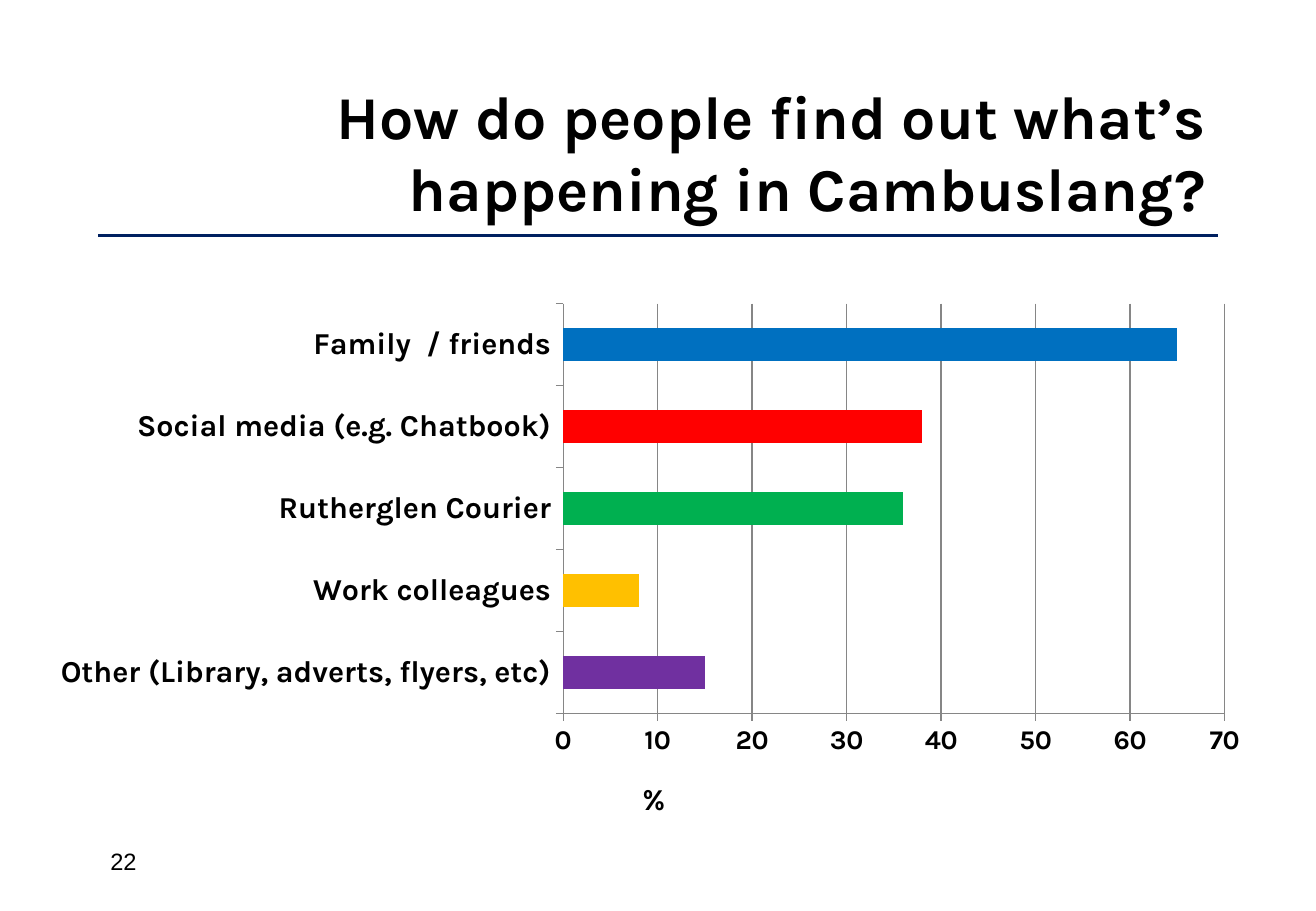
"""Builds a slide with a bar chart of how residents hear local news."""
from dataclasses import dataclass

from lxml.etree import SubElement
from pptx import Presentation
from pptx.chart.axis import ValueAxis
from pptx.chart.chart import Chart
from pptx.chart.data import CategoryChartData
from pptx.dml.color import RGBColor
from pptx.enum.chart import XL_CHART_TYPE, XL_TICK_MARK
from pptx.enum.shapes import MSO_CONNECTOR
from pptx.enum.text import MSO_ANCHOR, PP_ALIGN
from pptx.oxml.ns import qn
from pptx.slide import Slide
from pptx.text.text import Font
from pptx.util import Inches, Pt


@dataclass(frozen=True)
class Theme:
    """Colours, fonts and type sizes of the slide."""
    ink: str = "000000"
    rule: str = "002060"
    grid: str = "868686"
    heading_font: str = "Karla"
    number_font: str = "Arial"
    title_size: int = 36
    label_size: int = 18
    scale_size: int = 16
    number_size: int = 14


@dataclass(frozen=True)
class Source:
    """One way of hearing news, its share in percent and its bar colour."""
    label: str
    share: int
    color: str


@dataclass(frozen=True)
class Caption:
    """A text box with its place in inches and its style."""
    text: str
    left: float
    top: float
    width: float
    height: float
    font: str
    size: int
    bold: bool
    align: PP_ALIGN
    anchor: MSO_ANCHOR


THEME = Theme()
MARGIN, RULE_WIDTH, RULE_TOP = 0.81, 9.21, 1.94

SOURCES = [
    Source("Other (Library, adverts, flyers, etc)", 15, "7030A0"),
    Source("Work colleagues", 8, "FFC000"),
    Source("Rutherglen Courier", 36, "00B050"),
    Source("Social media (e.g. Chatbook)", 38, "FF0000"),
    Source("Family  / friends", 65, "0070C0"),
]

CAPTIONS = [
    Caption("How do people find out what’s happening in Cambuslang?",
            MARGIN, 0.58, RULE_WIDTH, 1.33, THEME.heading_font,
            THEME.title_size, True, PP_ALIGN.RIGHT, MSO_ANCHOR.MIDDLE),
    Caption("22", MARGIN, 6.92, 0.9, 0.33, THEME.number_font,
            THEME.number_size, False, PP_ALIGN.LEFT, MSO_ANCHOR.TOP),
]


def style_font(font: Font, name: str, size: int, bold: bool) -> None:
    """Apply a typeface, size and weight in the ink colour."""
    font.name = name
    font.size = Pt(size)
    font.bold = bold
    font.color.rgb = RGBColor.from_string(THEME.ink)


def add_caption(slide: Slide, caption: Caption) -> None:
    """Add one caption to the slide."""
    box = slide.shapes.add_textbox(
        Inches(caption.left), Inches(caption.top),
        Inches(caption.width), Inches(caption.height))
    frame = box.text_frame
    frame.word_wrap = True
    frame.vertical_anchor = caption.anchor
    frame.text = caption.text
    paragraph = frame.paragraphs[0]
    paragraph.alignment = caption.align
    style_font(paragraph.runs[0].font, caption.font, caption.size, caption.bold)


def add_title_rule(slide: Slide) -> None:
    """Draw the rule under the title."""
    rule = slide.shapes.add_connector(
        MSO_CONNECTOR.STRAIGHT, Inches(MARGIN), Inches(RULE_TOP),
        Inches(MARGIN + RULE_WIDTH), Inches(RULE_TOP))
    rule.line.color.rgb = RGBColor.from_string(THEME.rule)
    rule.line.width = Pt(2)
    SubElement(rule.element.spPr, qn("a:effectLst"))


def set_layout(parent, position: int, settings: dict[str, str | float]) -> None:
    """Give a chart part a manual layout in fractions of the chart."""
    for previous in parent.findall(qn("c:layout")):
        parent.remove(previous)
    layout = SubElement(parent, qn("c:layout"))
    manual = SubElement(layout, qn("c:manualLayout"))
    for name, value in settings.items():
        SubElement(manual, qn(f"c:{name}")).set("val", str(value))
    parent.insert(position, layout)


def style_share_axis(axis: ValueAxis) -> None:
    """Set the percent scale, its gridlines and its title."""
    axis.minimum_scale, axis.maximum_scale, axis.major_unit = 0, 70, 10
    axis.has_major_gridlines = True
    axis.major_gridlines.format.line.color.rgb = RGBColor.from_string(THEME.grid)
    axis.tick_labels.number_format = "0"
    axis.tick_labels.number_format_is_linked = False
    axis.axis_title.text_frame.text = "%"
    unit = axis.axis_title.text_frame.paragraphs[0].runs[0]
    style_font(unit.font, THEME.heading_font, THEME.label_size, True)
    set_layout(axis.axis_title.element, 1, {
        "xMode": "edge", "yMode": "edge", "x": 0.49, "y": 0.88})


def style_chart(chart: Chart) -> None:
    """Set the axes, bars and plot area of the chart."""
    chart.has_legend = False
    chart.has_title = False
    style_font(chart.font, THEME.heading_font, THEME.label_size, True)
    for axis, size in ((chart.category_axis, THEME.label_size),
                       (chart.value_axis, THEME.scale_size)):
        axis.major_tick_mark = XL_TICK_MARK.OUTSIDE
        axis.minor_tick_mark = XL_TICK_MARK.NONE
        axis.format.line.color.rgb = RGBColor.from_string(THEME.grid)
        style_font(axis.tick_labels.font, THEME.heading_font, size, True)
    style_share_axis(chart.value_axis)
    plot = chart.plots[0]
    plot.gap_width = 150
    plot.vary_by_categories = False
    for index, source in enumerate(SOURCES):
        fill = plot.series[0].points[index].format.fill
        fill.solid()
        fill.fore_color.rgb = RGBColor.from_string(source.color)
    set_layout(chart.element.find(qn("c:chart")).find(qn("c:plotArea")), 0, {
        "layoutTarget": "inner", "xMode": "edge", "yMode": "edge",
        "x": 0.43, "y": 0.02, "w": 0.54, "h": 0.75})


def add_sources_chart(slide: Slide) -> None:
    """Add the bar chart of news sources."""
    shares = CategoryChartData()
    shares.categories = [source.label for source in SOURCES]
    shares.add_series("Series 1", [source.share for source in SOURCES])
    frame = slide.shapes.add_chart(
        XL_CHART_TYPE.BAR_CLUSTERED, Inches(0.3), Inches(2.41),
        Inches(10.08), Inches(4.5), shares)
    style_chart(frame.chart)


def main() -> None:
    """Build and save the slide."""
    deck = Presentation()
    deck.slide_width, deck.slide_height = Inches(10.83), Inches(7.5)
    slide = deck.slides.add_slide(deck.slide_layouts[6])
    add_title_rule(slide)
    for caption in CAPTIONS:
        add_caption(slide, caption)
    add_sources_chart(slide)
    deck.save("out.pptx")


if __name__ == "__main__":
    main()
